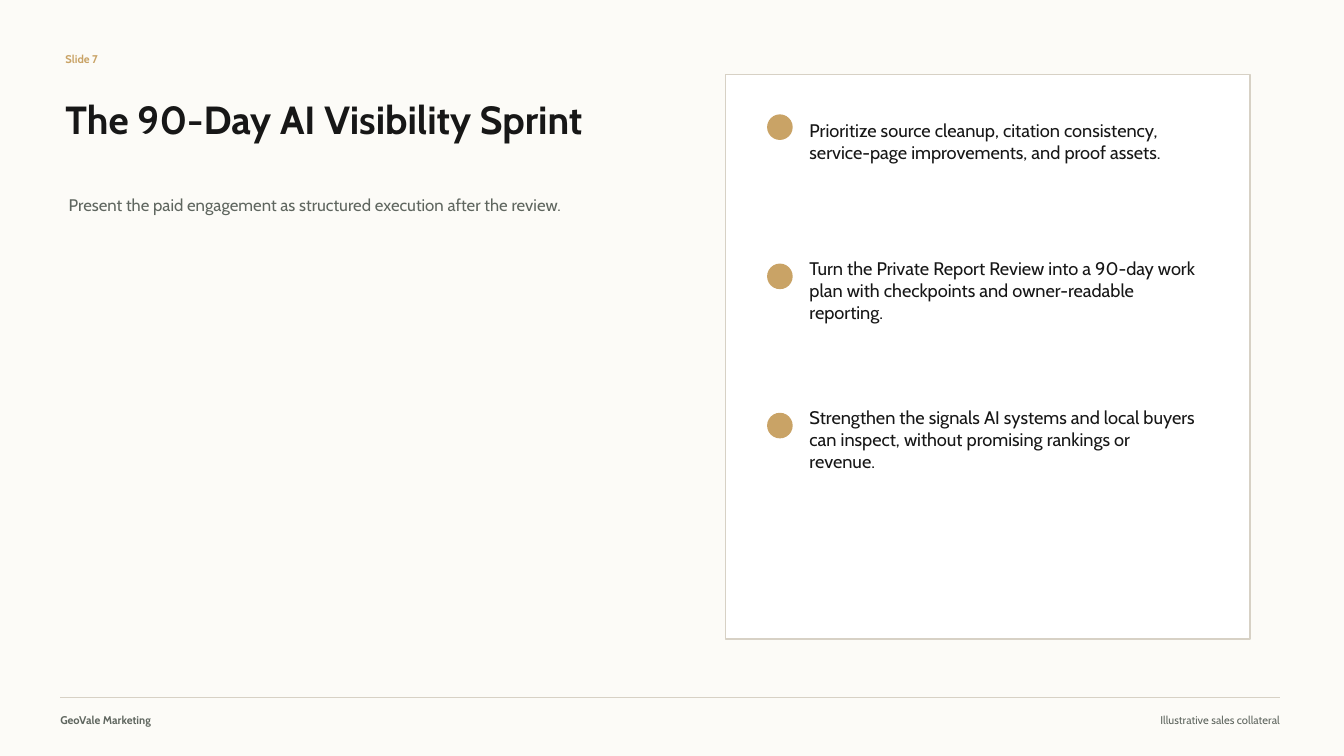
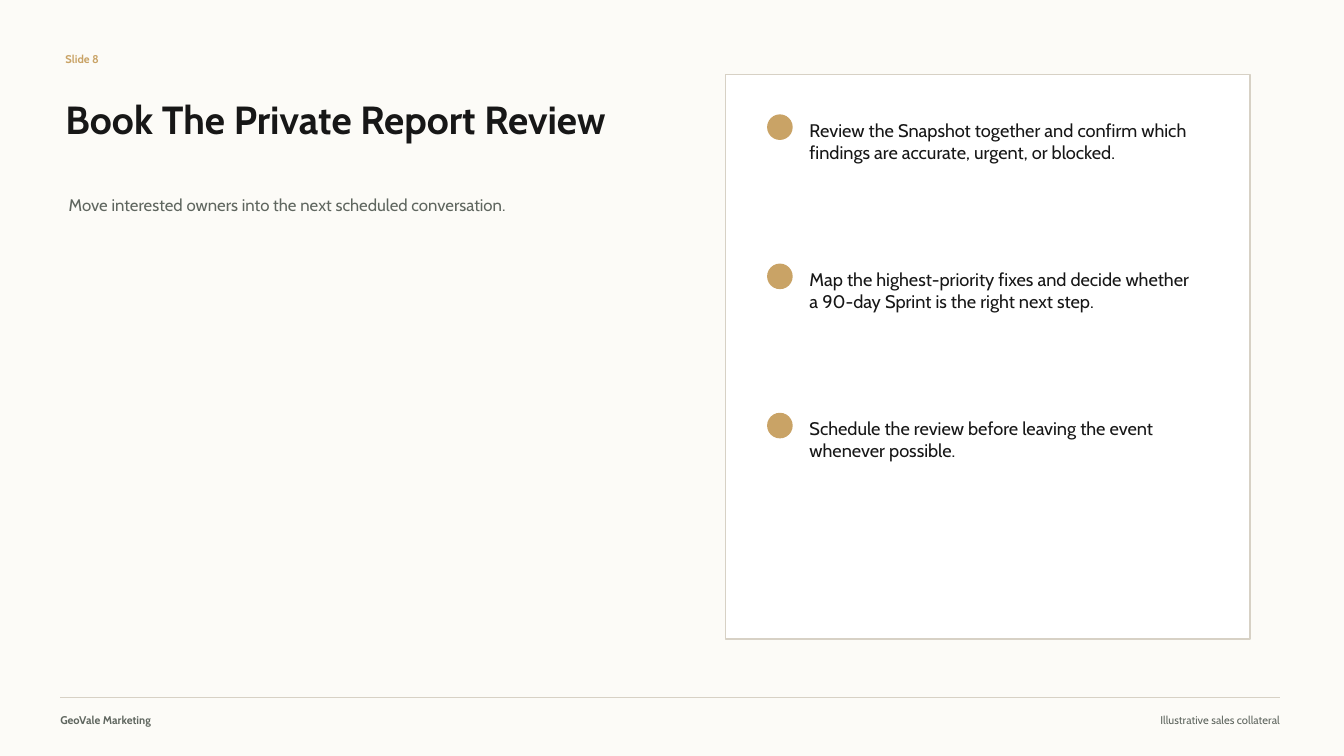
from dataclasses import dataclass
from typing import NamedTuple

from lxml.etree import SubElement
from pptx import Presentation
from pptx.dml.color import RGBColor
from pptx.enum.shapes import MSO_CONNECTOR, MSO_SHAPE
from pptx.enum.text import MSO_ANCHOR, MSO_AUTO_SIZE, PP_ALIGN
from pptx.oxml.ns import qn
from pptx.util import Cm, Pt

CREAM = RGBColor(0xFC, 0xFB, 0xF7)
WHITE = RGBColor(0xFF, 0xFF, 0xFF)
GOLD = RGBColor(0xC9, 0xA3, 0x66)
INK = RGBColor(0x17, 0x17, 0x17)
GREY = RGBColor(0x5F, 0x66, 0x5F)
SAND = RGBColor(0xD7, 0xD1, 0xC5)
FACE = "Cabin"
COLUMNS = 4
STEP = 3.76


class Box(NamedTuple):
    """A place on the slide, in centimetres."""

    left: float
    top: float
    width: float
    height: float

    def down(self, gap: float) -> "Box":
        """Return the same box moved down by a gap."""
        return self._replace(top=self.top + gap)

    def cm(self) -> list[Cm]:
        """Return the four lengths."""
        return [Cm(side) for side in self]


class Style(NamedTuple):
    """The look of one line of text."""

    size: int
    color: RGBColor
    bold: bool = False
    align: PP_ALIGN = PP_ALIGN.LEFT


@dataclass
class Page:
    """The words of one slide."""

    label: str
    title: str
    lead: str
    points: tuple[str, ...]


LABEL = Box(1.65, 1.22, 3.05, 0.56)
TITLE = Box(1.65, 2.08, 16.26, 1.83)
LEAD = Box(1.73, 4.37, 14.99, 1.57)
CARD = Box(18.29, 1.88, 13.21, 14.22)
DOT = Box(19.35, 2.9, 0.61, 0.61)
POINT = Box(20.4, 2.77, 9.78, 1.57)
RULE = Box(1.52, 17.58, 30.74, 0)
OWNER = Box(1.52, 17.86, 8.64, 0.56)
NOTE = Box(24.38, 17.86, 7.88, 0.56)

PAGES = (
    Page(
        "Slide 7",
        "The 90-Day AI Visibility Sprint",
        "Present the paid engagement as structured execution after the review.",
        (
            "Prioritize source cleanup, citation consistency, "
            "service-page improvements, and proof assets.",
            "Turn the Private Report Review into a 90-day work plan "
            "with checkpoints and owner-readable reporting.",
            "Strengthen the signals AI systems and local buyers can inspect, "
            "without promising rankings or revenue.",
        ),
    ),
    Page(
        "Slide 8",
        "Book The Private Report Review",
        "Move interested owners into the next scheduled conversation.",
        (
            "Review the Snapshot together and confirm which findings "
            "are accurate, urgent, or blocked.",
            "Map the highest-priority fixes and decide whether "
            "a 90-day Sprint is the right next step.",
            "Schedule the review before leaving the event whenever possible.",
        ),
    ),
)


def write(shape, text: str, box: Box, style: Style) -> None:
    """Place a text shape and fill it with one styled paragraph."""
    shape.left, shape.top, shape.width, shape.height = box.cm()
    frame = shape.text_frame
    frame.word_wrap = True
    frame.auto_size = MSO_AUTO_SIZE.NONE
    frame.vertical_anchor = MSO_ANCHOR.MIDDLE
    frame.margin_left = frame.margin_right = 0
    frame.margin_top = frame.margin_bottom = 0
    frame.text = text
    para = frame.paragraphs[0]
    para.alignment = style.align
    para.space_before = Pt(0)
    if shape.is_placeholder:
        props = para._p.get_or_add_pPr()
        props.set("marL", "0")
        props.set("indent", "0")
        SubElement(props, qn("a:buNone"))
    font = para.font
    font.name, font.size, font.bold = FACE, Pt(style.size), style.bold
    font.color.rgb = style.color


def label(slide, text: str, box: Box, style: Style) -> None:
    """Add a text box."""
    write(slide.shapes.add_textbox(*box.cm()), text, box, style)


def draw(slide, kind: MSO_SHAPE, box: Box, fill: RGBColor, edge: RGBColor):
    """Add a filled shape with a thin edge."""
    shape = slide.shapes.add_shape(kind, *box.cm())
    shape.shadow.inherit = False
    shape.fill.solid()
    shape.fill.fore_color.rgb = fill
    shape.line.color.rgb = edge
    shape.line.width = Pt(1)
    return shape


def foot(slide) -> None:
    """Add the footer rule and its two texts."""
    left, top, width, _ = RULE.cm()
    rule = slide.shapes.add_connector(
        MSO_CONNECTOR.STRAIGHT, left, top, left + width, top
    )
    rule.line.color.rgb = SAND
    rule.line.width = Pt(1)
    SubElement(rule.element.spPr, qn("a:effectLst"))
    label(slide, "GeoVale Marketing", OWNER, Style(8, GREY, True))
    label(slide, "Illustrative sales collateral", NOTE,
          Style(8, GREY, align=PP_ALIGN.RIGHT))


def build(deck, page: Page) -> None:
    """Add one slide."""
    slide = deck.slides.add_slide(deck.slide_layouts[COLUMNS])
    title, lead, *bodies = slide.placeholders
    card = draw(slide, MSO_SHAPE.RECTANGLE, CARD, WHITE, SAND).element
    card.getparent().insert(2, card)
    label(slide, page.label, LABEL, Style(8, GOLD, True))
    write(title, page.title, TITLE, Style(28, INK, True))
    write(lead, page.lead, LEAD, Style(12, GREY))
    for row, (body, text) in enumerate(zip(bodies, page.points)):
        gap = row * STEP
        draw(slide, MSO_SHAPE.OVAL, DOT.down(gap), GOLD, GOLD)
        write(body, text, POINT.down(gap), Style(13, INK))
    foot(slide)


def main() -> None:
    """Build and save the deck."""
    deck = Presentation()
    deck.slide_width, deck.slide_height = Cm(33.87), Cm(19.05)
    back = deck.slide_master.background.fill
    back.solid()
    back.fore_color.rgb = CREAM
    for page in PAGES:
        build(deck, page)
    deck.save("out.pptx")


if __name__ == "__main__":
    main()
